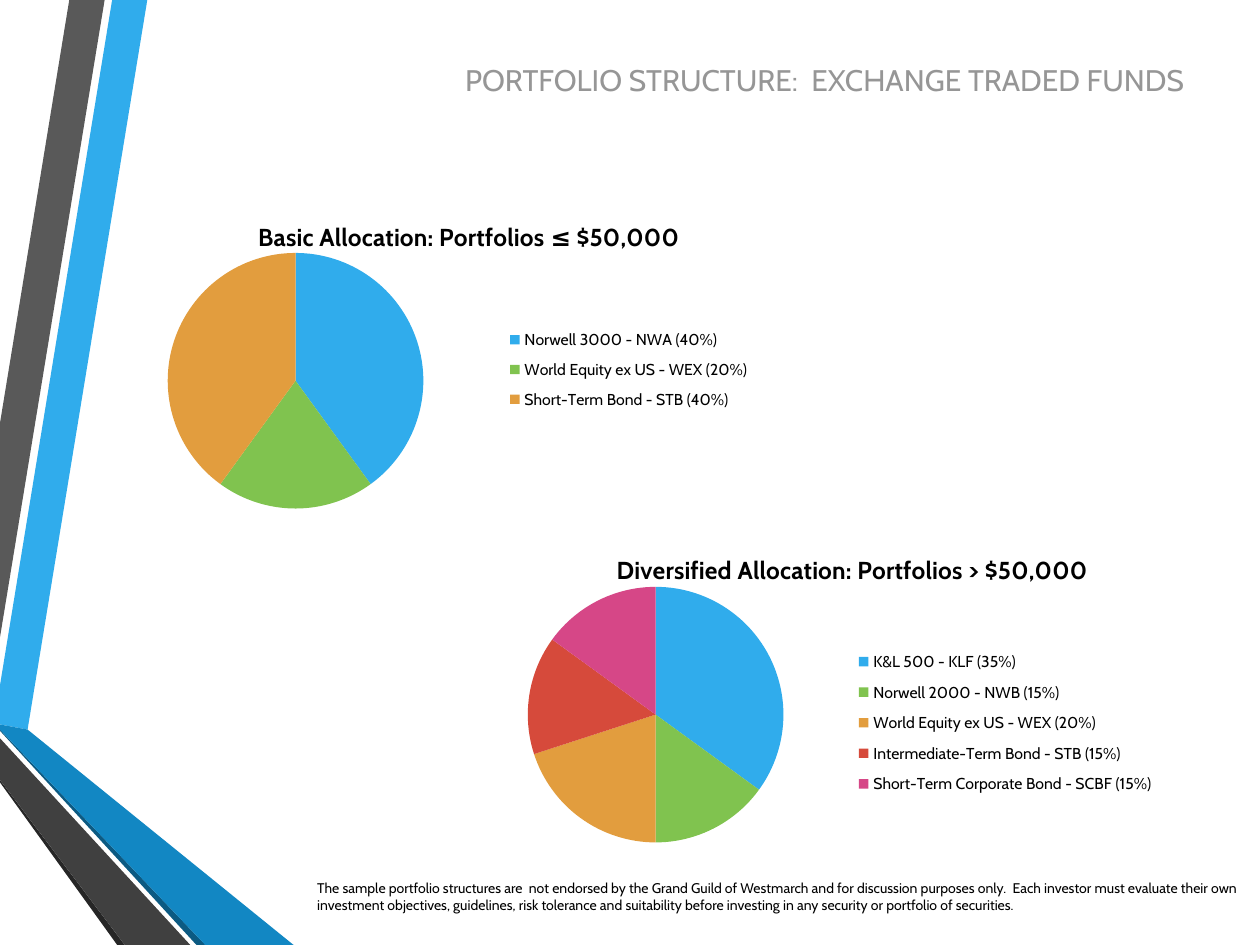
from lxml.etree import SubElement
from pptx import Presentation
from pptx.chart.data import CategoryChartData
from pptx.dml.color import RGBColor
from pptx.enum.chart import XL_CHART_TYPE, XL_LEGEND_POSITION
from pptx.enum.text import MSO_ANCHOR, PP_ALIGN
from pptx.oxml.ns import qn
from pptx.util import Pt

FONT = "Cabin"
BLACK = RGBColor(0x00, 0x00, 0x00)
TITLE_GRAY = RGBColor(0x96, 0x96, 0x96)
BLUE = RGBColor(0x30, 0xAC, 0xEC)
MID_BLUE = RGBColor(0x12, 0x87, 0xC3)
DEEP_BLUE = RGBColor(0x0C, 0x5A, 0x82)
GRAY = RGBColor(0x59, 0x59, 0x59)
DARK_GRAY = RGBColor(0x40, 0x40, 0x40)
DEEP_GRAY = RGBColor(0x26, 0x26, 0x26)
SLICE_COLORS = [BLUE, RGBColor(0x80, 0xC3, 0x4F), RGBColor(0xE2, 0x9D, 0x3E),
                RGBColor(0xD6, 0x4A, 0x3B), RGBColor(0xD6, 0x47, 0x87)]

SLIDE_W, SLIDE_H = 720, 540

# Ribbon outlines along the left edge, back to front
RIBBONS = [
    (BLUE, [(0, 391.7), (0, 414), (15.8, 416.9), (84.2, 0), (64.1, 0)]),
    (GRAY, [(59.8, 0), (39.6, 0), (0, 241.9), (0, 364.3)]),
    (DEEP_GRAY, [(0, 445.7), (0, 447.1), (67, SLIDE_H), (71.3, SLIDE_H)]),
    (DEEP_BLUE, [(0, 416.9), (0, 417.6), (112.3, SLIDE_H), (117.4, SLIDE_H)]),
    (MID_BLUE, [(0, 416.9), (117.4, SLIDE_H), (167.8, SLIDE_H), (15.8, 416.9), (0, 414)]),
    (DARK_GRAY, [(0, 445.7), (71.3, SLIDE_H), (108.7, SLIDE_H), (0, 421.9)]),
]

TITLE = "PORTFOLIO STRUCTURE:  EXCHANGE TRADED FUNDS"
DISCLAIMER = (
    "The sample portfolio structures are  not endorsed by the Grand Guild of Westmarch "
    "and for discussion purposes only.  Each investor must evaluate their own investment "
    "objectives, guidelines, risk tolerance and suitability before investing in any "
    "security or portfolio of securities."
)

# Boxes are left, top, width, height; layouts are fractions of the chart box
PLOT_LAYOUT = (0.02, 0.253, 0.513, 0.695)
TITLE_LAYOUT = (0.215, 0.15)
ALLOCATIONS = [
    {"title": "Basic Allocation: Portfolios ≤ $50,000",
     "box": (61.2, 91.4, 389.5, 210.2),
     "legend": (0.575, 0.435, 0.38, 0.27),
     "funds": [("Norwell 3000 - NWA", 40), ("World Equity ex US - WEX", 20),
               ("Short-Term Bond - STB", 40)]},
    {"title": "Diversified Allocation: Portfolios > $50,000",
     "box": (262.8, 282.2, 404.6, 210.2),
     "legend": (0.55, 0.4, 0.44, 0.445),
     "funds": [("K&L 500 - KLF", 35), ("Norwell 2000 - NWB", 15),
               ("World Equity ex US - WEX", 20), ("Intermediate-Term Bond - STB", 15),
               ("Short-Term Corporate Bond - SCBF", 15)]},
]


def add_ribbon(slide, color, points):
    start, *rest = [(Pt(x), Pt(y)) for x, y in points]
    builder = slide.shapes.build_freeform(*start)
    builder.add_line_segments(rest, close=True)
    ribbon = builder.convert_to_shape()
    ribbon.shadow.inherit = False
    ribbon.fill.solid()
    ribbon.fill.fore_color.rgb = color
    ribbon.line.fill.background()


def style_font(font, size, color=BLACK, bold=False):
    font.name, font.size, font.bold = FONT, Pt(size), bold
    font.color.rgb = color


def add_text(slide, text, box, size, color, align):
    frame = slide.shapes.add_textbox(*map(Pt, box)).text_frame
    frame.word_wrap = True
    frame.vertical_anchor = MSO_ANCHOR.MIDDLE
    paragraph = frame.paragraphs[0]
    paragraph.text = text
    paragraph.alignment = align
    style_font(paragraph.font, size, color)


def set_layout(element, fractions, inner=False):
    """Place a chart part by hand, after the child its schema puts first."""
    for old in element.findall(qn("c:layout")):
        element.remove(old)
    layout = SubElement(element, qn("c:layout"))
    manual = SubElement(layout, qn("c:manualLayout"))
    if inner:
        SubElement(manual, qn("c:layoutTarget"), val="inner")
    for axis in "xy":
        SubElement(manual, qn(f"c:{axis}Mode"), val="edge")
    for part, value in zip("xywh", fractions):
        SubElement(manual, qn(f"c:{part}"), val=str(value))
    leading = [child for child in element
               if child.tag in (qn("c:tx"), qn("c:legendPos"), qn("c:legendEntry"))]
    element.insert(len(leading), layout)


def add_allocation(slide, allocation):
    data = CategoryChartData()
    data.categories = [f"{fund} ({share}%)" for fund, share in allocation["funds"]]
    data.add_series("Series 1", [share for _, share in allocation["funds"]])
    chart = slide.shapes.add_chart(
        XL_CHART_TYPE.PIE, *map(Pt, allocation["box"]), data).chart
    style_font(chart.font, 18)

    chart.has_title = True
    heading = chart.chart_title.text_frame.paragraphs[0]
    heading.text = allocation["title"]
    style_font(heading.font, 14, bold=True)
    style_font(heading.runs[0].font, 14, bold=True)

    chart.has_legend = True
    chart.legend.position = XL_LEGEND_POSITION.RIGHT
    chart.legend.include_in_layout = False
    style_font(chart.legend.font, 9)

    plot = chart.plots[0]
    plot.vary_by_categories = True
    for index in range(len(allocation["funds"])):
        fill = plot.series[0].points[index].format.fill
        fill.solid()
        fill.fore_color.rgb = SLICE_COLORS[index]

    root = chart.element
    set_layout(root.find(".//" + qn("c:plotArea")), PLOT_LAYOUT, inner=True)
    set_layout(root.find(".//" + qn("c:title")), TITLE_LAYOUT)
    set_layout(root.find(".//" + qn("c:legend")), allocation["legend"])


def main():
    deck = Presentation()
    deck.slide_width, deck.slide_height = Pt(SLIDE_W), Pt(SLIDE_H)
    slide = deck.slides.add_slide(deck.slide_layouts[6])

    # Side ribbons
    for color, points in RIBBONS:
        add_ribbon(slide, color, points)

    # Title, the two pies and the disclaimer
    add_text(slide, TITLE, (88.6, 31.7, 595.4, 28.1), 17, TITLE_GRAY, PP_ALIGN.RIGHT)
    for allocation in ALLOCATIONS:
        add_allocation(slide, allocation)
    add_text(slide, DISCLAIMER, (174.2, 499, 545.8, 26.6), 8, BLACK, PP_ALIGN.LEFT)

    deck.save("out.pptx")


if __name__ == "__main__":
    main()
